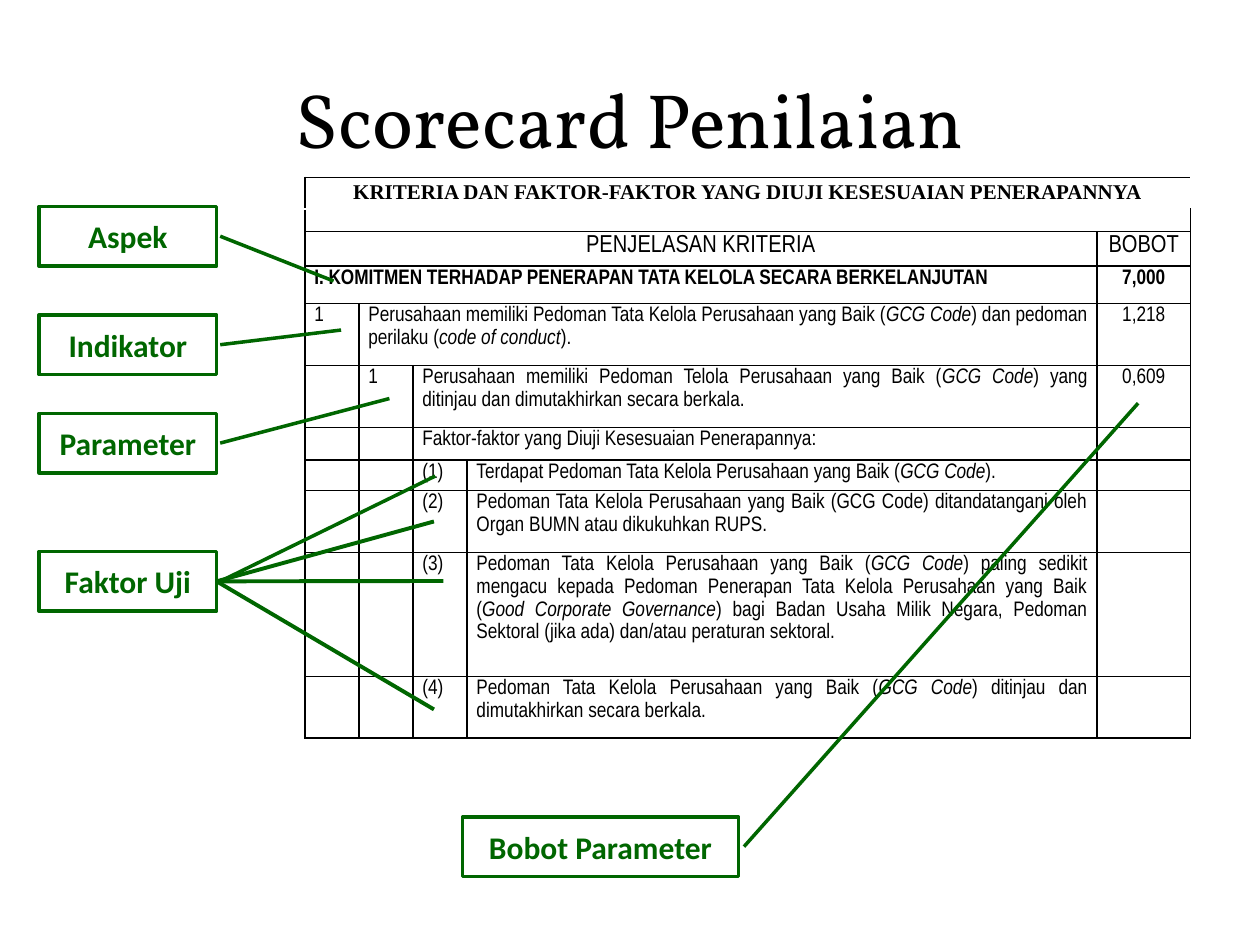
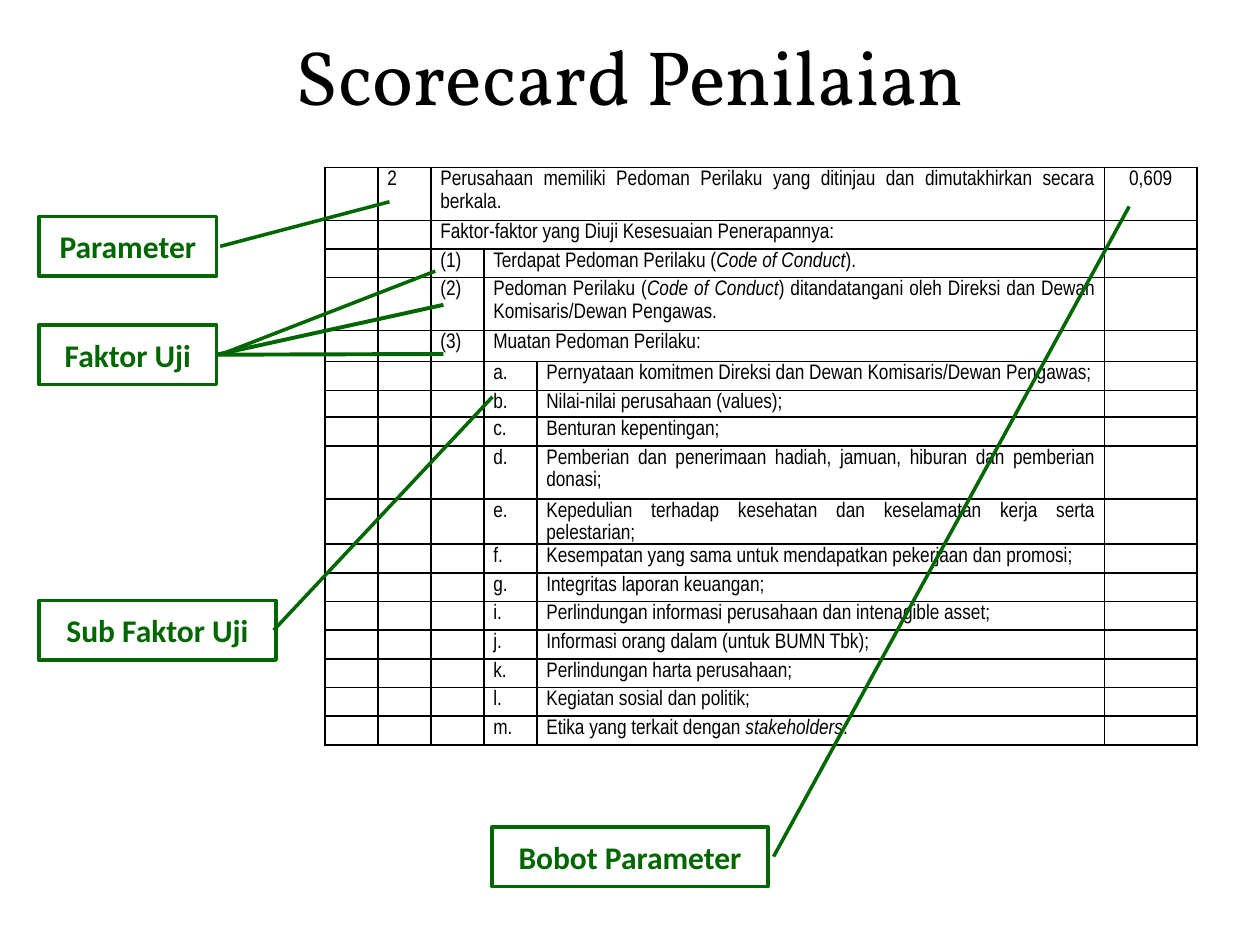
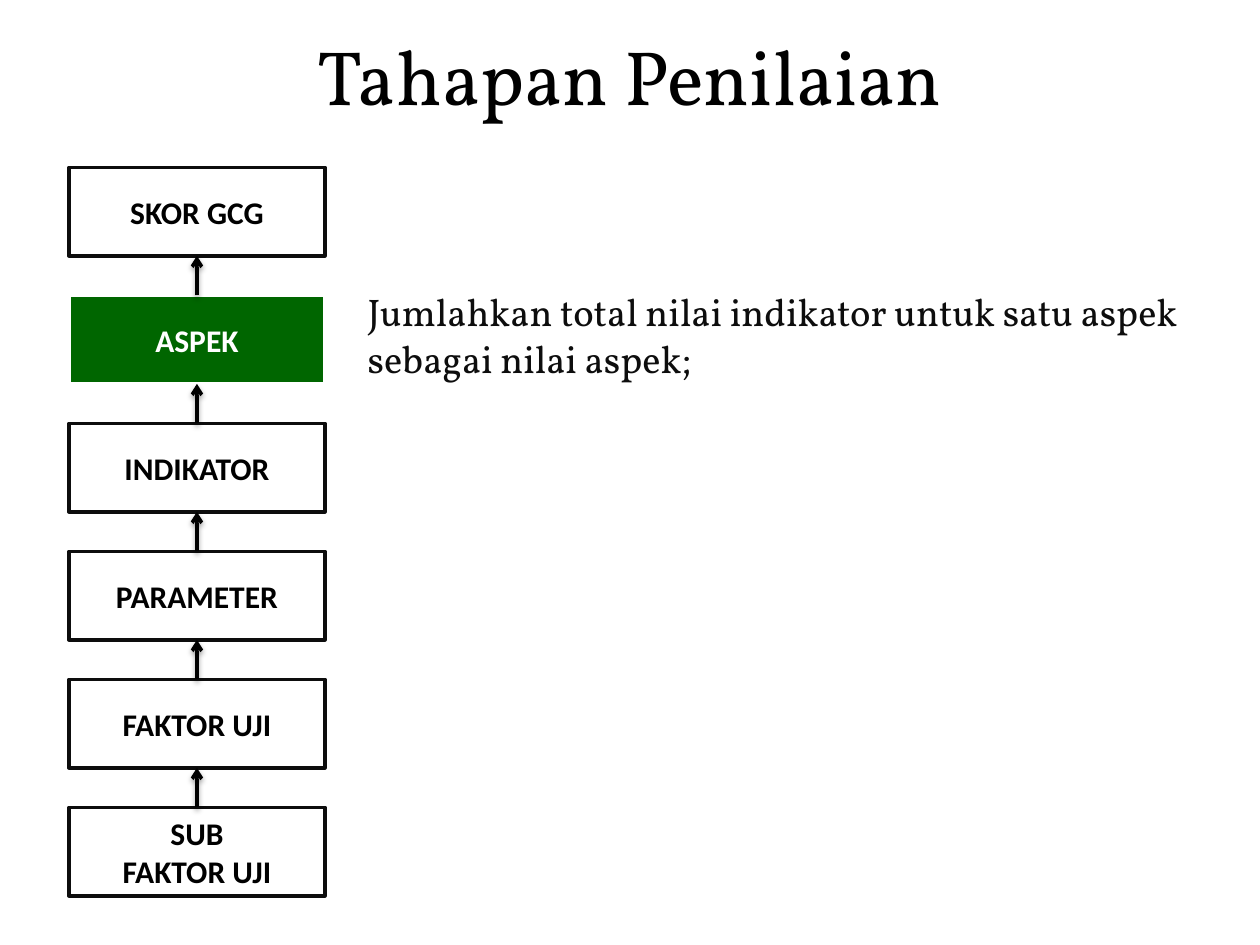
from dataclasses import dataclass, field

from lxml.etree import SubElement
from pptx import Presentation
from pptx.dml.color import RGBColor
from pptx.enum.shapes import MSO_CONNECTOR, MSO_SHAPE
from pptx.enum.text import MSO_ANCHOR, PP_ALIGN
from pptx.oxml.ns import qn
from pptx.util import Pt

GREEN, BLACK, NEAR_BLACK, WHITE = "006600", "000000", "0D0D0D", "FFFFFF"
TITLE_FONT, LABEL_FONT, TABLE_FONT = "Vollkorn", "Calibri", "Arial Narrow"
LABEL = dict(font=LABEL_FONT, size=18, bold=True, align=PP_ALIGN.CENTER, anchor=MSO_ANCHOR.MIDDLE)
CELL = dict(font=TABLE_FONT, size=12, line_spacing=1.15, space_after=3)
HEADING = dict(align=PP_ALIGN.CENTER, anchor=MSO_ANCHOR.MIDDLE)


@dataclass
class Row:
    """A table row: empty cells up to indent, a label, then text up to the weight column.

    Without a weight the text takes that column too. Asterisks enclose italics.
    """
    height: float
    indent: int = 0
    label: str = ""
    text: str = ""
    weight: str | None = ""
    style: dict = field(default_factory=dict)
    edges: str = "TB"


FACTORS_HEADING = "Faktor-faktor yang Diuji Kesesuaian Penerapannya:"

CRITERIA_ROWS = [
    Row(18, text="KRITERIA DAN FAKTOR-FAKTOR YANG DIUJI KESESUAIAN PENERAPANNYA", weight=None,
        style=dict(HEADING, font="Times New Roman", bold=True), edges="T"),
    Row(13, edges="B"),
    Row(19.7, text="PENJELASAN KRITERIA", weight="BOBOT", style=dict(HEADING, size=14)),
    Row(21.6, text="I. KOMITMEN TERHADAP PENERAPAN TATA KELOLA SECARA BERKELANJUTAN",
        weight="7,000", style=dict(bold=True)),
    Row(35.4, 0, "1", "Perusahaan memiliki Pedoman Tata Kelola Perusahaan yang Baik (*GCG Code*) "
        "dan pedoman perilaku (*code of conduct*).", "1,218"),
    Row(35.4, 1, "1", "Perusahaan memiliki Pedoman Telola Perusahaan yang Baik (*GCG Code*) "
        "yang ditinjau dan dimutakhirkan secara berkala.", "0,609"),
    Row(18.5, 2, text=FACTORS_HEADING),
    Row(17.5, 2, "(1)", "Terdapat Pedoman Tata Kelola Perusahaan yang Baik (*GCG Code*)."),
    Row(35.4, 2, "(2)", "Pedoman Tata Kelola Perusahaan yang Baik (GCG Code) ditandatangani oleh "
        "Organ BUMN atau dikukuhkan RUPS."),
    Row(70.8, 2, "(3)", "Pedoman Tata Kelola Perusahaan yang Baik (*GCG Code*) paling sedikit "
        "mengacu kepada Pedoman Penerapan Tata Kelola Perusahaan yang Baik "
        "(*Good Corporate Governance*) bagi Badan Usaha Milik Negara, Pedoman Sektoral "
        "(jika ada) dan/atau peraturan sektoral."),
    Row(35.4, 2, "(4)", "Pedoman Tata Kelola Perusahaan yang Baik (*GCG Code*) ditinjau dan "
        "dimutakhirkan secara berkala."),
]

CONDUCT_ROWS = [
    Row(30.3, 1, "2", "Perusahaan memiliki Pedoman Perilaku yang ditinjau dan dimutakhirkan "
        "secara berkala.", "0,609"),
    Row(16.4, 2, text=FACTORS_HEADING),
    Row(16.4, 2, "(1)", "Terdapat Pedoman Perilaku (*Code of Conduct*)."),
    Row(30.3, 2, "(2)", "Pedoman Perilaku (*Code of Conduct*) ditandatangani oleh Direksi dan "
        "Dewan Komisaris/Dewan Pengawas."),
    Row(17.8, 2, "(3)", "Muatan Pedoman Perilaku:"),
    Row(16.4, 3, "a.", "Pernyataan komitmen Direksi dan Dewan Komisaris/Dewan Pengawas;"),
    Row(15.3, 3, "b.", "Nilai-nilai perusahaan (values);"),
    Row(16.4, 3, "c.", "Benturan kepentingan;"),
    Row(30.3, 3, "d.", "Pemberian dan penerimaan hadiah, jamuan, hiburan dan pemberian donasi;"),
    Row(25.7, 3, "e.", "Kepedulian terhadap kesehatan dan keselamatan kerja serta pelestarian;"),
    Row(16.4, 3, "f.", "Kesempatan yang sama untuk mendapatkan pekerjaan dan promosi;"),
    Row(16.4, 3, "g.", "Integritas laporan keuangan;"),
    Row(16.4, 3, "i.", "Perlindungan informasi perusahaan dan intenagible asset;"),
    Row(16.4, 3, "j.", "Informasi orang dalam (untuk BUMN Tbk);"),
    Row(16.4, 3, "k.", "Perlindungan harta perusahaan;"),
    Row(16.4, 3, "l.", "Kegiatan sosial dan politik;"),
    Row(16.4, 3, "m.", "Etika yang terkait dengan *stakeholders*."),
]

# Callouts: text, left, top, width, pointer tip, then the ends of any further pointers
SCORECARDS = [
    dict(title_top=36, table_at=(174.2, 101.3), rows=CRITERIA_ROWS,
         columns=[30.9] * 4 + [96.5, 48.2, 184.3, 53.7],
         callouts=[
             ("Aspek", 22.3, 118, 101.5, (190.6, 160.6), []),
             ("Indikator", 22.3, 180, 101.5, (194.9, 188.6), []),
             ("Parameter", 22.3, 236.2, 101.5, (222.5, 227.7), []),
             ("Faktor Uji", 22.3, 315.2, 101.5, (248.7, 272),
              [(248, 298), (253.4, 332), (248, 405.4)]),
             ("Bobot Parameter", 264.3, 466.8, 157.7, (650.4, 230.3), []),
         ]),
    dict(title_top=11.5, table_at=(185.7, 95.6), rows=CONDUCT_ROWS,
         columns=[30.3] * 4 + [324.3, 52.9],
         callouts=[
             ("Parameter", 22.3, 123.8, 101.5, (222.5, 115.3), []),
             ("Faktor Uji", 22.3, 185.7, 101.5, (248.7, 154.9), [(253.4, 174.2), (253.4, 202.3)]),
             ("Sub Faktor Uji", 22.3, 343.2, 135.4, (281.4, 226.7), []),
             ("Bobot Parameter", 281.2, 472.5, 157.7, (645.3, 117.8), []),
         ]),
]

STAGES = ["SKOR GCG", "ASPEK", "INDIKATOR", "PARAMETER", "FAKTOR UJI", "SUB\nFAKTOR UJI"]
CURRENT_STAGE = "ASPEK"
STAGE_NOTE = "Jumlahkan total nilai indikator untuk satu aspek sebagai nilai aspek;"
STAGE_LEFT, STAGE_TOP, STAGE_WIDTH, STAGE_HEIGHT, STAGE_STEP = 39.4, 95.6, 146.3, 50.6, 73.15
CALLOUT_HEIGHT = 34


def rgb(colour):
    return RGBColor.from_string(colour)


def points(*lengths):
    return [Pt(length) for length in lengths]


def write(frame, text, font, size, colour=BLACK, bold=False, align=PP_ALIGN.LEFT,
          anchor=MSO_ANCHOR.TOP, line_spacing=None, space_after=None):
    """Fill a text frame; each line is a paragraph and asterisks enclose italics."""
    frame.word_wrap = True
    frame.vertical_anchor = anchor
    for number, line in enumerate(text.split("\n")):
        paragraph = frame.add_paragraph() if number else frame.paragraphs[0]
        paragraph.alignment = align
        paragraph.line_spacing = line_spacing
        if space_after is not None:
            paragraph.space_after = Pt(space_after)
        for part, words in enumerate(line.split("*")):
            run = paragraph.add_run()
            run.text = words
            run.font.name, run.font.size = font, Pt(size)
            run.font.bold, run.font.italic = bold, part % 2 == 1
            run.font.color.rgb = rgb(colour)


def add_slide(deck, title, title_top):
    slide = deck.slides.add_slide(deck.slide_layouts[5])
    heading = slide.shapes.title
    heading.left, heading.top, heading.width, heading.height = points(36, title_top, 648, 62)
    write(heading.text_frame, title, TITLE_FONT, 44, align=PP_ALIGN.CENTER,
          anchor=MSO_ANCHOR.MIDDLE)
    return slide


def draw_borders(cell, sides):
    properties = cell._tc.get_or_add_tcPr()
    for position, side in enumerate(s for s in "LRTB" if s in sides):
        line = SubElement(properties, qn(f"a:ln{side}"), w=str(Pt(1)))
        fill = SubElement(line, qn("a:solidFill"))
        SubElement(fill, qn("a:srgbClr"), val=BLACK)
        properties.insert(position, line)


def prepare_cell(cell, sides):
    cell.fill.background()
    cell.margin_left = cell.margin_right = Pt(5.4)
    cell.margin_top = cell.margin_bottom = 0
    draw_borders(cell, sides)


def fill_cell(cell, text, **style):
    if text:
        write(cell.text_frame, text, **{**CELL, **style})


def add_criteria_table(slide, table_at, columns, rows):
    size = sum(columns), sum(row.height for row in rows)
    table = slide.shapes.add_table(len(rows), len(columns), *points(*table_at, *size)).table
    table.first_row = table.horz_banding = False
    for column, width in zip(table.columns, columns):
        column.width = Pt(width)
    last = len(columns) - 1
    for r, row in enumerate(rows):
        table.rows[r].height = Pt(row.height)
        for c in range(last + 1):
            ends = "L" * (c == 0) + "R" * (c == last)
            prepare_cell(table.cell(r, c), row.edges + ("LR" if row.edges == "TB" else ends))
        if row.text:
            start = row.indent + bool(row.label)
            end = last if row.weight is None else last - 1
            if end > start:
                table.cell(r, start).merge(table.cell(r, end))
            fill_cell(table.cell(r, row.indent), row.label, align=PP_ALIGN.JUSTIFY)
            fill_cell(table.cell(r, start), row.text,
                      **{"align": PP_ALIGN.JUSTIFY, **row.style})
            if row.weight:
                fill_cell(table.cell(r, last), row.weight,
                          **{**row.style, "align": PP_ALIGN.CENTER})
        for c in range(last + 1):
            paragraph = table.cell(r, c).text_frame.paragraphs[0]
            if not paragraph.runs:
                SubElement(paragraph._p, qn("a:endParaRPr"), sz="800")


def add_box(slide, kind, box, text, line, fill=None, colour=BLACK):
    shape = slide.shapes.add_shape(kind, *points(*box))
    shape.shadow.inherit = False
    if fill:
        shape.fill.solid()
        shape.fill.fore_color.rgb = rgb(fill)
    else:
        shape.fill.background()
    shape.line.color.rgb = rgb(line)
    shape.line.width = Pt(2)
    write(shape.text_frame, text, colour=colour, **LABEL)
    return shape


def add_line(slide, start, end, colour, width):
    """Draw a straight line and return it with its empty effect list."""
    line = slide.shapes.add_connector(MSO_CONNECTOR.STRAIGHT, *points(*start, *end))
    line.line.color.rgb = rgb(colour)
    line.line.width = Pt(width)
    return line, SubElement(line._element.spPr, qn("a:effectLst"))


def add_callout(slide, text, left, top, width, tip, pointer_ends):
    callout = add_box(slide, MSO_SHAPE.LINE_CALLOUT_1, (left, top, width, CALLOUT_HEIGHT),
                      text, GREEN, colour=GREEN)
    tip_x, tip_y = tip
    start_x = 0.99 if text.startswith("Sub") else 1.02
    pointer = 0.5, start_x, (tip_y - top) / CALLOUT_HEIGHT, (tip_x - left) / width
    for number, value in enumerate(pointer):
        callout.adjustments[number] = value
    for end in pointer_ends:
        add_line(slide, (left + width, top + CALLOUT_HEIGHT / 2), end, GREEN, 2.25)


def add_stage_arrow(slide, lower, upper):
    arrow, effects = add_line(slide, (0, 0), (0, 0), BLACK, 2)
    arrow.begin_connect(lower, 0)
    arrow.end_connect(upper, 2)
    SubElement(arrow.line._get_or_add_ln(), qn("a:tailEnd"), type="arrow")
    shadow = SubElement(effects, qn("a:outerShdw"), blurRad=str(Pt(3.1)), dist=str(Pt(1.6)),
                        dir="5400000", rotWithShape="0")
    shade = SubElement(shadow, qn("a:srgbClr"), val=BLACK)
    SubElement(shade, qn("a:alpha"), val="38000")


def add_stages(slide):
    upper = None
    for number, stage in enumerate(STAGES):
        box = STAGE_LEFT, STAGE_TOP + number * STAGE_STEP, STAGE_WIDTH, STAGE_HEIGHT
        look = (dict(line=WHITE, fill=GREEN, colour=WHITE) if stage == CURRENT_STAGE
                else dict(line=NEAR_BLACK))
        lower = add_box(slide, MSO_SHAPE.RECTANGLE, box, stage, **look)
        if upper is not None:
            add_stage_arrow(slide, lower, upper)
        upper = lower


def main():
    deck = Presentation()
    deck.slide_width, deck.slide_height = points(720, 540)

    for card in SCORECARDS:
        slide = add_slide(deck, "Scorecard Penilaian", card["title_top"])
        add_criteria_table(slide, card["table_at"], card["columns"], card["rows"])
        for callout in card["callouts"]:
            add_callout(slide, *callout)

    slide = add_slide(deck, "Tahapan Penilaian", 11.5)
    add_stages(slide)
    note = slide.shapes.add_textbox(*points(203, 161.3, 494, 80.6))
    write(note.text_frame, STAGE_NOTE, TITLE_FONT, 22, colour=NEAR_BLACK, space_after=6)

    deck.save("out.pptx")


if __name__ == "__main__":
    main()
